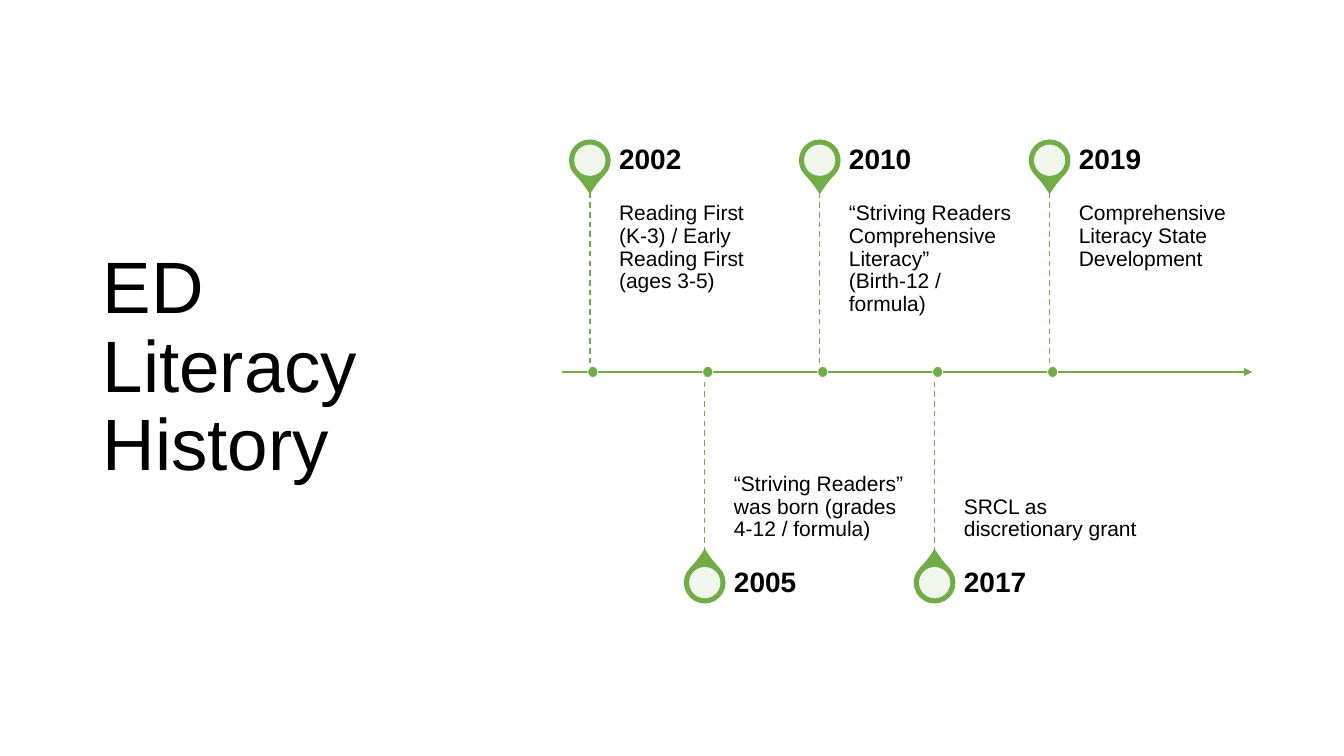
"""Build a literacy history slide with a timeline of five pinned events."""
from lxml.etree import SubElement
from pptx import Presentation
from pptx.dml.color import RGBColor
from pptx.enum.dml import MSO_LINE
from pptx.enum.shapes import MSO_CONNECTOR, MSO_SHAPE
from pptx.enum.text import MSO_ANCHOR
from pptx.oxml.ns import qn
from pptx.util import Inches, Pt

GREEN = RGBColor(0x70, 0xAD, 0x47)
WHITE = RGBColor(0xFF, 0xFF, 0xFF)
BLACK = RGBColor(0, 0, 0)

AXIS = 3.69
FIRST = 5.85
STEP = 1.14
REACH = 1.78
PIN = 0.4
HOLE = 0.31

EVENTS = [
    ("2002", "Reading First (K-3) / Early Reading First (ages 3-5)"),
    ("2005", "“Striving Readers” was born (grades 4-12 / formula)"),
    ("2010", "“Striving Readers Comprehensive Literacy” (Birth-12 / formula)"),
    ("2017", "SRCL as discretionary grant"),
    ("2019", "Comprehensive Literacy State Development"),
]

deck = Presentation()
deck.slide_width = Inches(13.33)
deck.slide_height = Inches(7.5)
slide = deck.slides.add_slide(deck.slide_layouts[6])
shapes = slide.shapes


def add_text(box, text, size, anchor, insets, bold=False):
    frame = shapes.add_textbox(*map(Inches, box)).text_frame
    left, top, right, bottom = map(Inches, insets)
    layout = {
        "word_wrap": True,
        "vertical_anchor": anchor,
        "margin_left": left,
        "margin_top": top,
        "margin_right": right,
        "margin_bottom": bottom,
    }
    for name, value in layout.items():
        setattr(frame, name, value)
    para = frame.paragraphs[0]
    para.line_spacing = 0.9
    run = para.add_run()
    run.text = text
    style = {"name": "Arial", "size": Pt(size), "bold": bold}
    for name, value in style.items():
        setattr(run.font, name, value)
    run.font.color.rgb = BLACK


def add_line(start, end, width):
    line = shapes.add_connector(MSO_CONNECTOR.STRAIGHT, *map(Inches, start + end))
    line.line.color.rgb = GREEN
    line.line.width = Pt(width)
    SubElement(line._element.spPr, qn("a:effectLst"))
    return line


add_text((0.92, 0.61, 3.69, 6.09), "ED Literacy History", 52,
         MSO_ANCHOR.MIDDLE, (0.1, 0.05, 0.1, 0.05))

axis = add_line((5.57, AXIS), (12.42, AXIS), 1.5)
SubElement(axis.get_or_add_ln(), qn("a:tailEnd"), type="triangle")

for index, (year, note) in enumerate(EVENTS):
    x = FIRST + index * STEP
    left = x + 0.29
    if index % 2 == 0:
        top, tip, head, mid, turn = AXIS - REACH, AXIS - REACH, 1.28, 1.59, 135
        anchor, insets = MSO_ANCHOR.TOP, (0, 0.1, 0.1, 0.16)
    else:
        top, tip, head, mid, turn = AXIS, AXIS + REACH, 5.47, 5.78, 315
        anchor, insets = MSO_ANCHOR.BOTTOM, (0, 0.16, 0, 0.1)

    stem = add_line((x, min(tip, AXIS)), (x, max(tip, AXIS)), 1)
    stem.line.dash_style = MSO_LINE.DASH

    marks = [
        (MSO_SHAPE.TEAR, x, mid, PIN, PIN, GREEN, GREEN, 1),
        (MSO_SHAPE.OVAL, x, mid, HOLE, HOLE, WHITE, None, 0),
        (MSO_SHAPE.OVAL, x + 0.03, AXIS, 0.1, 0.11, GREEN, WHITE, 0.5),
    ]
    for kind, cx, cy, wide, high, fill, edge, width in marks:
        mark = shapes.add_shape(kind, Inches(cx - wide / 2), Inches(cy - high / 2),
                                Inches(wide), Inches(high))
        mark.shadow.inherit = False
        mark.fill.solid()
        mark.fill.fore_color.rgb = fill
        if edge is None:
            mark.line.fill.background()
            color = mark._element.spPr.find(qn("a:solidFill"))[0]
            SubElement(color, qn("a:alpha"), val="90000")
        else:
            mark.line.color.rgb = edge
            mark.line.width = Pt(width)
        if kind == MSO_SHAPE.TEAR:
            mark.adjustments[0] = 1.15
            mark.rotation = turn

    add_text((left, top, 1.73, REACH), note, 15, anchor, insets)
    add_text((left, head, 1.73, 0.63), year, 20, MSO_ANCHOR.MIDDLE,
             (0, 0, 0.14, 0), bold=True)

deck.save("out.pptx")
